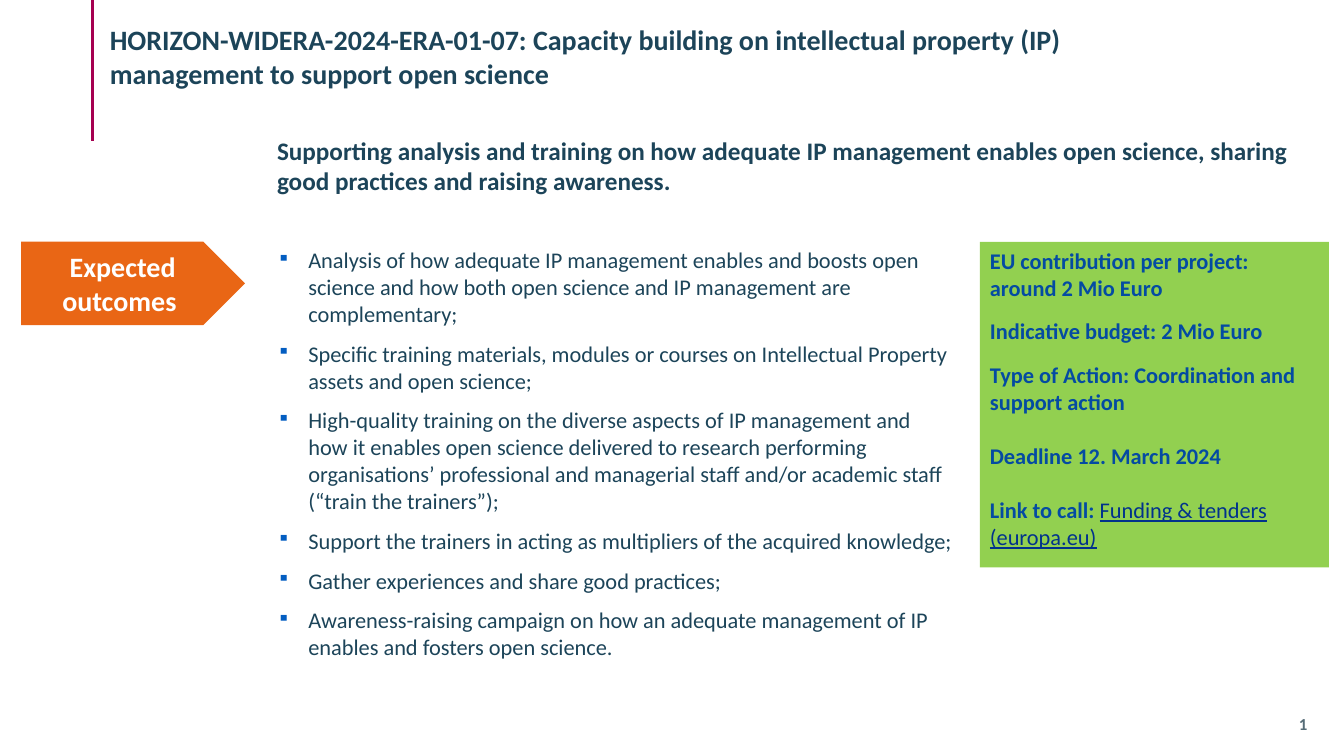
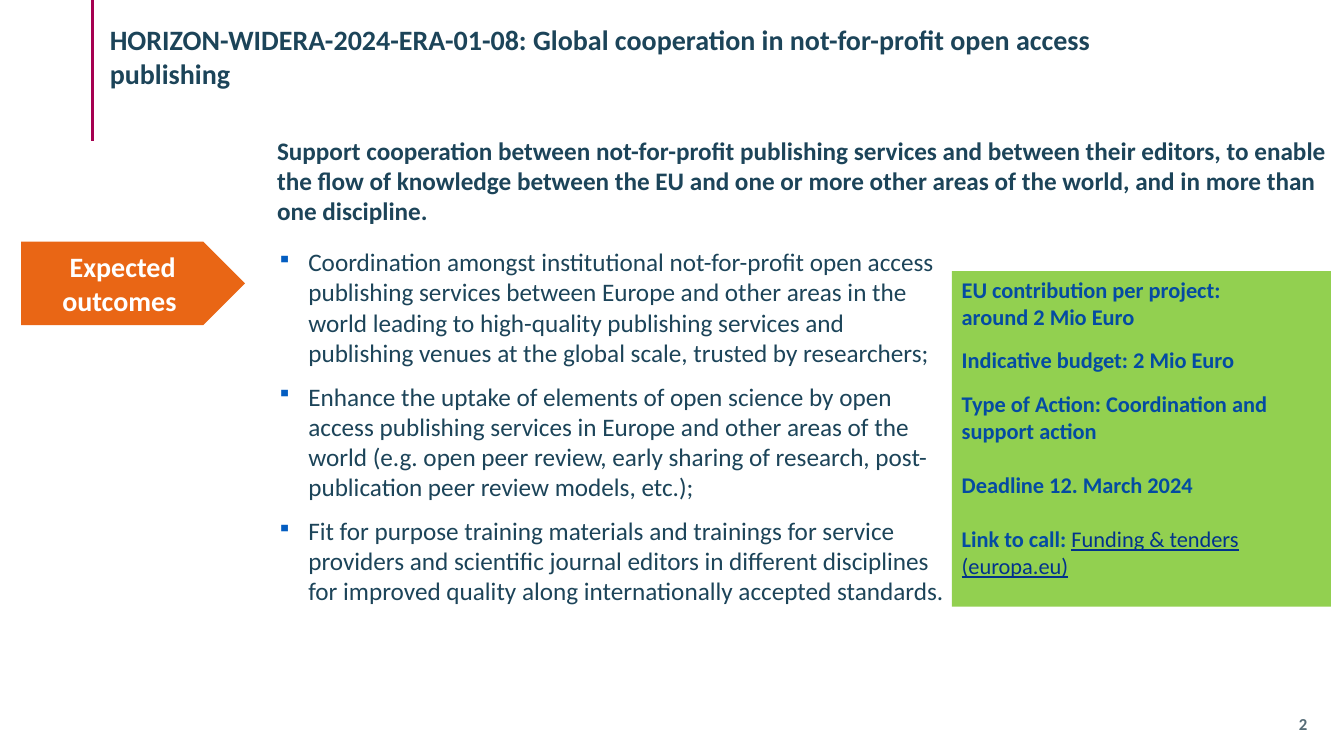
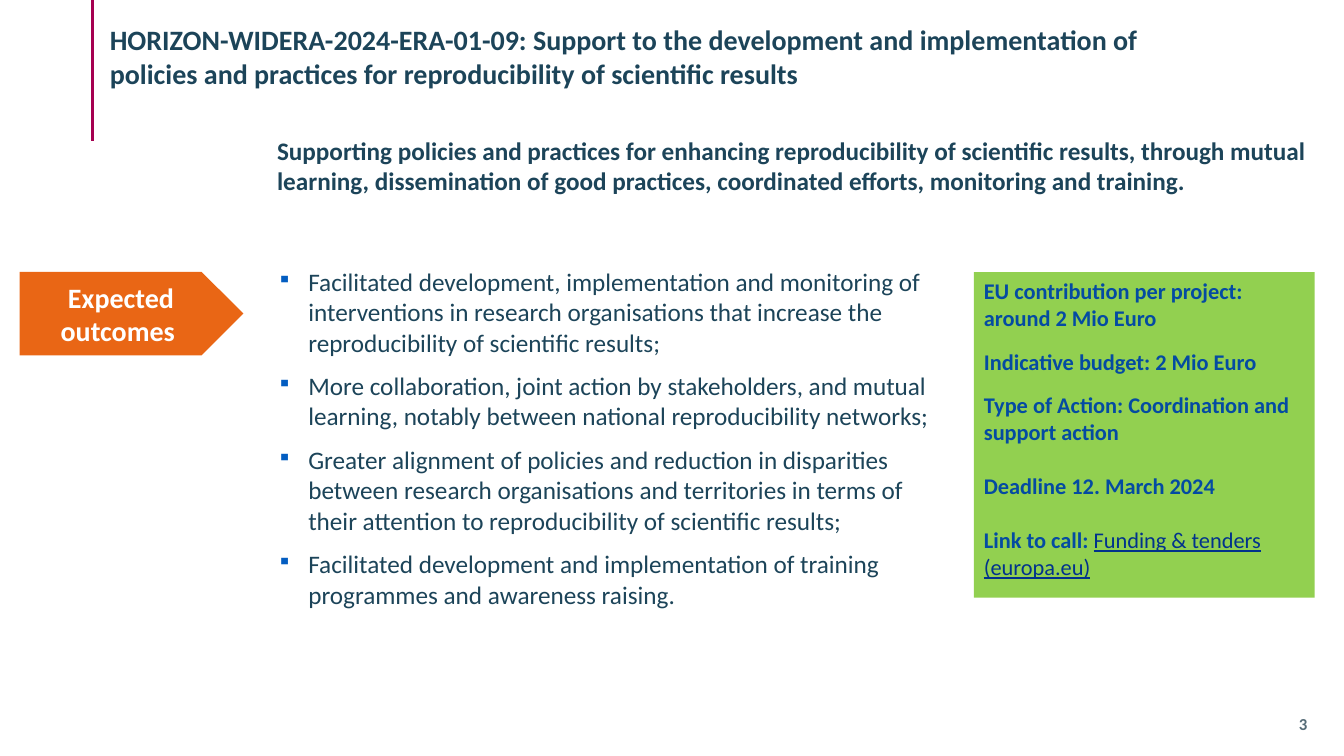
from lxml import etree
from pptx import Presentation
from pptx.dml.color import RGBColor
from pptx.enum.shapes import MSO_CONNECTOR, MSO_SHAPE
from pptx.enum.text import MSO_ANCHOR, PP_ALIGN
from pptx.oxml.ns import qn
from pptx.util import Inches, Pt

LINE = MSO_CONNECTOR.STRAIGHT
RECT, ARROW = MSO_SHAPE.RECTANGLE, MSO_SHAPE.PENTAGON
TOP, MIDDLE = MSO_ANCHOR.TOP, MSO_ANCHOR.MIDDLE
LEFT, CENTER = PP_ALIGN.LEFT, PP_ALIGN.CENTER

WIDE, HIGH = Inches(13.33), Inches(7.5)
FONT = "Calibri"
INK, WHITE, GREY = "1C4459", "FFFFFF", "566C77"
RULE, ORANGE, GREEN = "A50050", "E96615", "92D050"
BLUE, LINK, MARK = "044BA2", "01328C", "035DC1"

# Boxes are left, top, width, height in percent of the slide
TITLE = (7.43, 2.35, 82.3, 10.27)
INTRO = (19.88, 17.2, 79.82, 13.47)
PAGE = (96.1, 94.27, 1.73, 3.07)
INDENT = Inches(0.31)

# Text and space after each paragraph, in points
FACTS = [
    ("EU contribution per project:\naround 2 Mio Euro", 12),
    ("Indicative budget: 2 Mio Euro", 12),
    ("Type of Action: Coordination and support action", 19.5),
    ("Deadline 12. March 2024", 19.5),
    ("Link to call: ", 0),
]

CALLS = [
    dict(
        title="HORIZON-WIDERA-2024-ERA-01-07: Capacity building on intellectual "
              "property (IP) management to support open science",
        intro="Supporting analysis and training on how adequate IP management enables "
              "open science, sharing good practices and raising awareness.",
        goals=[
            "Analysis of how adequate IP management enables and boosts open science "
            "and how both open science and IP management are complementary;",
            "Specific training materials, modules or courses on Intellectual Property "
            "assets and open science;",
            "High-quality training on the diverse aspects of IP management and how it "
            "enables open science delivered to research performing organisations’ "
            "professional and managerial staff and/or academic staff "
            "(“train the trainers”);",
            "Support the trainers in acting as multipliers of the acquired knowledge;",
            "Gather experiences and share good practices;",
            "Awareness-raising campaign on how an adequate management of IP enables "
            "and fosters open science.",
        ],
        size=16,
        arrow=(1.58, 31.95, 16.65, 11.07),
        body=(19.88, 31.95, 51.78, 56.93),
        panel=(72.92, 32, 25.96, 43.07),
    ),
    dict(
        title="HORIZON-WIDERA-2024-ERA-01-08: Global cooperation in not-for-profit "
              "open access publishing",
        intro="Support cooperation between not-for-profit publishing services and "
              "between their editors, to enable the flow of knowledge between the EU "
              "and one or more other areas of the world, and in more than one "
              "discipline.",
        goals=[
            "Coordination amongst institutional not-for-profit open access publishing "
            "services between Europe and other areas in the world leading to "
            "high-quality publishing services and publishing venues at the global "
            "scale, trusted by researchers;",
            "Enhance the uptake of elements of open science by open access publishing "
            "services in Europe and other areas of the world (e.g. open peer review, "
            "early sharing of research, post-publication peer review models, etc.);",
            "Fit for purpose training materials and trainings for service providers "
            "and scientific journal editors in different disciplines for improved "
            "quality along internationally accepted standards.",
        ],
        size=18,
        arrow=(1.58, 31.95, 16.65, 11.07),
        body=(19.88, 31.95, 51.78, 56.93),
        panel=(70.82, 35.87, 28.21, 44.4),
    ),
    dict(
        title="HORIZON-WIDERA-2024-ERA-01-09: Support to the development and "
              "implementation of policies and practices for reproducibility of "
              "scientific results",
        intro="Supporting policies and practices for enhancing reproducibility of "
              "scientific results, through mutual learning, dissemination of good "
              "practices, coordinated efforts, monitoring and training.",
        goals=[
            "Facilitated development, implementation and monitoring of interventions "
            "in research organisations that increase the reproducibility of "
            "scientific results;",
            "More collaboration, joint action by stakeholders, and mutual learning, "
            "notably between national reproducibility networks;",
            "Greater alignment of policies and reduction in disparities between "
            "research organisations and territories in terms of their attention to "
            "reproducibility of scientific results;",
            "Facilitated development and implementation of training programmes and "
            "awareness raising.",
        ],
        size=18,
        arrow=(1.46, 35.95, 16.65, 11.07),
        body=(19.88, 34.57, 51.78, 56.93),
        panel=(72.47, 36, 25.36, 43.07),
    ),
]


def color(code):
    return RGBColor.from_string(code)


def place(box):
    """Turn percent shares into slide lengths."""
    return [round(part * side / 100) for part, side in zip(box, (WIDE, HIGH) * 2)]


def frame(shape, anchor=TOP):
    area = shape.text_frame
    area.word_wrap = True
    area.vertical_anchor = anchor
    return area


def text_box(slide, box, anchor=TOP):
    return frame(slide.shapes.add_textbox(*place(box)), anchor)


def block(slide, kind, box, fill, anchor=TOP):
    shape = slide.shapes.add_shape(kind, *place(box))
    shape.shadow.inherit = False
    shape.fill.solid()
    shape.fill.fore_color.rgb = color(fill)
    shape.line.fill.background()
    return frame(shape, anchor)


def span(para, text, size=16, ink=INK, bold=False, line=False):
    """Add runs to a paragraph, with a line break at each newline."""
    for order, part in enumerate(text.split("\n")):
        if order:
            para.add_line_break()
        run = para.add_run()
        run.text = part
        font = run.font
        font.name, font.size, font.bold = FONT, Pt(size), bold
        font.underline = line
        font.color.rgb = color(ink)


def write(area, text, align=LEFT, before=0, after=0, bullet=False, **style):
    """Add one paragraph, filling the empty first one if it is free."""
    para = area.paragraphs[0]
    if para.runs:
        para = area.add_paragraph()
        para.space_before = Pt(before)
    para.alignment = align
    para.space_after = Pt(after)
    if bullet:
        props = para._p.get_or_add_pPr()
        props.set("marL", str(INDENT))
        props.set("indent", str(-INDENT))
        tint = etree.SubElement(props, qn("a:buClr"))
        etree.SubElement(tint, qn("a:srgbClr"), val=MARK)
        etree.SubElement(props, qn("a:buSzPct"), val="80000")
        etree.SubElement(props, qn("a:buChar"), char="▪")
    span(para, text, **style)
    return para


def base(slide, title, page):
    # Rule beside the title
    left, top, _, high = place((6.9, 0, 0, 18.67))
    rule = slide.shapes.add_connector(LINE, left, top, left, top + high)
    rule.line.color.rgb = color(RULE)
    rule.line.width = Pt(2.25)
    etree.SubElement(rule._element.spPr, qn("a:effectLst"))
    # Title and page number
    write(text_box(slide, TITLE), title, size=20, bold=True)
    area = text_box(slide, PAGE, MIDDLE)
    area.margin_left = area.margin_right = area.margin_top = area.margin_bottom = 0
    write(area, str(page), align=CENTER, size=12, ink=GREY, bold=True)


def facts(slide, box):
    area = block(slide, RECT, box, GREEN)
    for text, after in FACTS:
        para = write(area, text, after=after, ink=BLUE, bold=True)
    span(para, "Funding & tenders (europa.eu)", ink=LINK, line=True)


def label(slide, box):
    area = block(slide, ARROW, box, ORANGE, MIDDLE)
    write(area, "Expected outcomes ", align=CENTER, size=20, ink=WHITE, bold=True)


def points(slide, box, goals, size):
    area = text_box(slide, box)
    for goal in goals:
        write(area, goal, before=size * 0.2, after=6, bullet=True, size=size)


def build(deck, page, call):
    slide = deck.slides.add_slide(deck.slide_layouts[6])
    base(slide, call["title"], page)
    facts(slide, call["panel"])
    label(slide, call["arrow"])
    write(text_box(slide, INTRO), call["intro"], size=18, bold=True)
    points(slide, call["body"], call["goals"], call["size"])


def main():
    deck = Presentation()
    deck.slide_width, deck.slide_height = WIDE, HIGH
    for page, call in enumerate(CALLS, 1):
        build(deck, page, call)
    deck.save("out.pptx")


if __name__ == "__main__":
    main()
